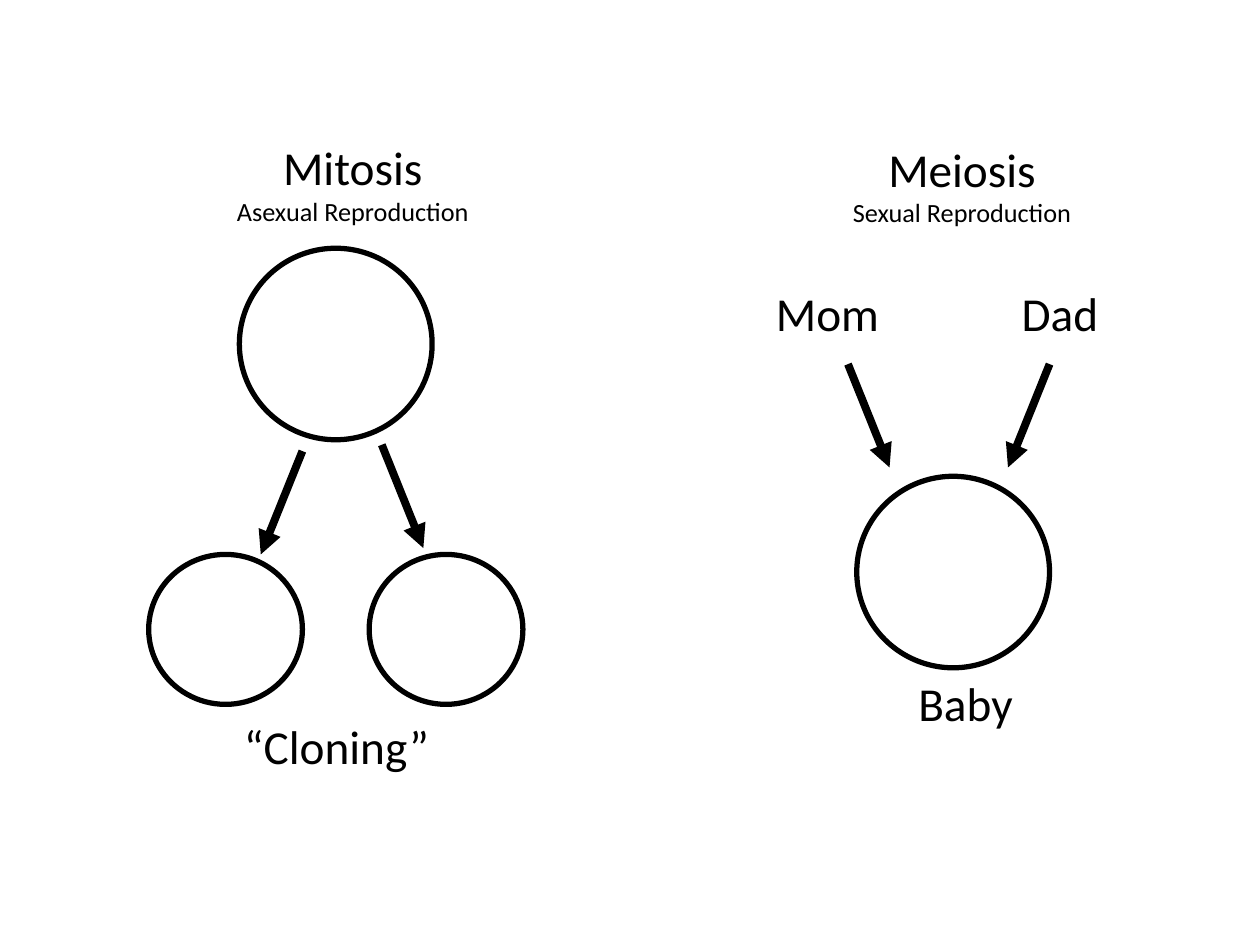
from lxml import etree
from pptx import Presentation
from pptx.dml.color import RGBColor
from pptx.enum.shapes import MSO_CONNECTOR, MSO_SHAPE
from pptx.enum.text import MSO_AUTO_SIZE, PP_ALIGN
from pptx.oxml.ns import qn
from pptx.util import Inches, Pt

STRAIGHT = MSO_CONNECTOR.STRAIGHT
OVAL = MSO_SHAPE.OVAL
FIT_SHAPE = MSO_AUTO_SIZE.SHAPE_TO_FIT_TEXT
CENTER, LEFT = PP_ALIGN.CENTER, PP_ALIGN.LEFT

COLORS = {"ink": "000000"}
FONT = "Calibri"
TITLE_SIZE, SUBTITLE_SIZE = 27, 15
PARENT_CELL = (1.53, 1.52)
DAUGHTER_CELL = (1.22, 1.19)
ARROW_RUN, ARROW_DROP = 0.33, 0.82

# Cells: left, top, size
CELLS = [
    (1.9, 1.97, PARENT_CELL),
    (1.18, 4.4, DAUGHTER_CELL),
    (2.93, 4.4, DAUGHTER_CELL),
    (6.8, 3.78, PARENT_CELL),
]

# Arrows: start x, start y, direction (-1 leans left, 1 leans right)
ARROWS = [(2.4, 3.58, -1), (3.03, 3.53, 1), (6.73, 2.89, 1), (8.33, 2.89, -1)]

# Labels: left, top, width, height, alignment, lines
LABELS = [
    (1.77, 1.05, 2.06, 0.81, CENTER, ["Mitosis", "Asexual Reproduction"]),
    (6.06, 2.21, 1.03, 0.56, LEFT, ["Mom"]),
    (8.01, 2.21, 0.81, 0.56, LEFT, ["Dad"]),
    (7.19, 5.3, 0.96, 0.56, LEFT, ["Baby"]),
    (6.66, 1.06, 1.95, 0.81, CENTER, ["Meiosis", "Sexual Reproduction"]),
    (1.83, 5.64, 1.68, 0.56, CENTER, ["“Cloning”"]),
]


def set_line(line, width):
    line.color.rgb = RGBColor.from_string(COLORS["ink"])
    line.width = Pt(width)


def add_cell(slide, left, top, size):
    width, height = size
    shape = slide.shapes.add_shape(
        OVAL, Inches(left), Inches(top), Inches(width), Inches(height))
    shape.shadow.inherit = False
    shape.fill.background()
    set_line(shape.line, 3)


def add_arrow(slide, x, y, direction):
    connector = slide.shapes.add_connector(
        STRAIGHT, Inches(x), Inches(y),
        Inches(x + direction * ARROW_RUN), Inches(y + ARROW_DROP))
    set_line(connector.line, 4.5)
    properties = connector.line._get_or_add_ln()
    etree.SubElement(properties, qn("a:tailEnd"), type="triangle")
    etree.SubElement(connector._element.spPr, qn("a:effectLst"))


def add_label(slide, left, top, width, height, alignment, lines):
    box = slide.shapes.add_textbox(
        Inches(left), Inches(top), Inches(width), Inches(height))
    text_frame = box.text_frame
    text_frame.word_wrap = False
    text_frame.auto_size = FIT_SHAPE
    text_frame.text = "\n".join(lines)
    for paragraph, size in zip(text_frame.paragraphs, (TITLE_SIZE, SUBTITLE_SIZE)):
        paragraph.alignment = alignment
        font = paragraph.runs[0].font
        font.name = FONT
        font.size = Pt(size)
        font.color.rgb = RGBColor.from_string(COLORS["ink"])


def main():
    presentation = Presentation()
    presentation.slide_width = Inches(10)
    presentation.slide_height = Inches(7.5)
    slide = presentation.slides.add_slide(presentation.slide_layouts[6])

    for cell in CELLS:
        add_cell(slide, *cell)
    for arrow in ARROWS:
        add_arrow(slide, *arrow)
    for label in LABELS:
        add_label(slide, *label)

    presentation.save("out.pptx")


if __name__ == "__main__":
    main()
